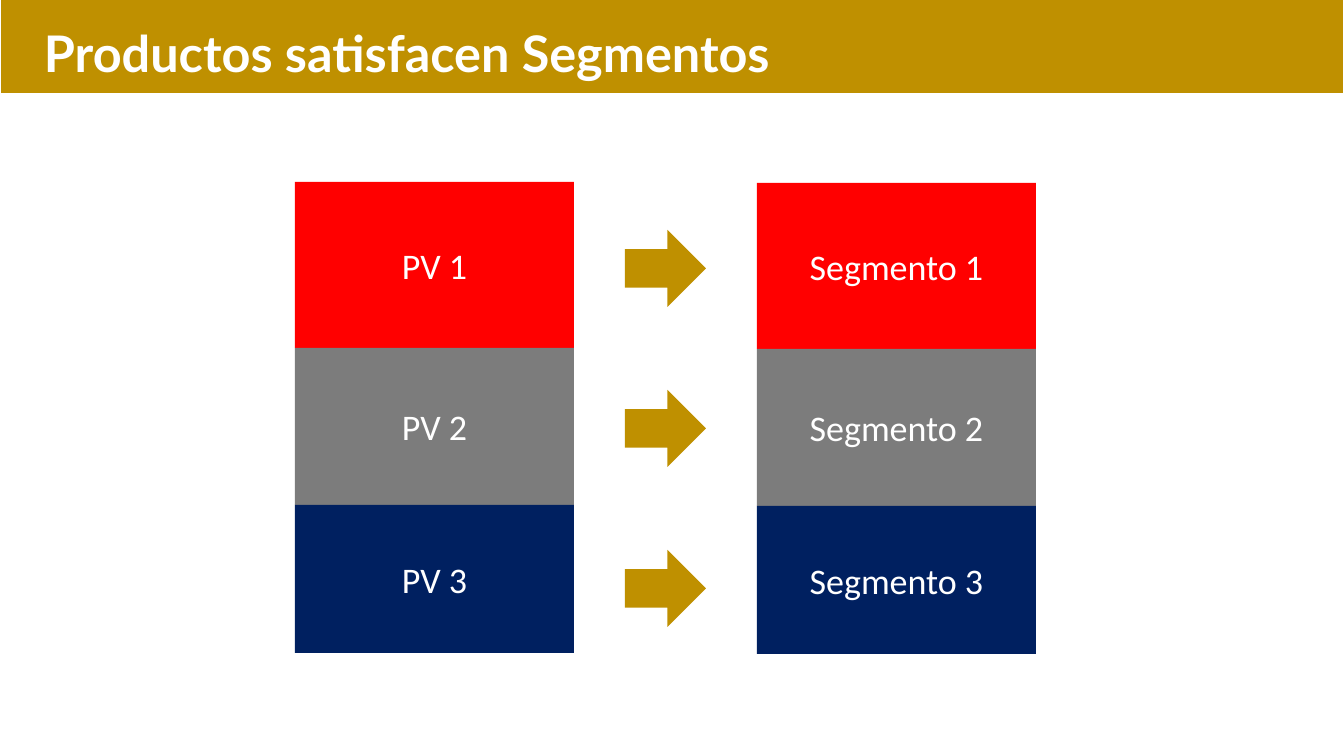
import pptx
import pptx.util
import pptx.dml.color
import pptx.enum.shapes
import pptx.enum.text

PX = 914400 / 100.8
SHAPE = pptx.enum.shapes.MSO_SHAPE
ALIGN = pptx.enum.text.PP_ALIGN
ANCHOR = pptx.enum.text.MSO_ANCHOR

GOLD, WHITE = "BF9000", "FFFFFF"
BAND_COLORS = ["FF0000", "7C7C7C", "002060"]
BAND_HEIGHTS = [166, 157, 148]


def px(n):
    return pptx.util.Emu(round(n * PX))


def rgb(value):
    return pptx.dml.color.RGBColor.from_string(value)


def add_block(slide, kind, x, y, w, h, fill, line=None):
    sp = slide.shapes.add_shape(kind, px(x), px(y), px(w), px(h))
    sp.shadow.inherit = False
    sp.fill.solid()
    sp.fill.fore_color.rgb = rgb(fill)
    if line:
        sp.line.color.rgb = rgb(line)
        sp.line.width = pptx.util.Pt(1)
    else:
        sp.line.fill.background()
    return sp


def set_text(sp, text, size, font="Calibri", color=WHITE, bold=False,
             align=ALIGN.CENTER, anchor=ANCHOR.MIDDLE, spacing=None):
    tf = sp.text_frame
    tf.word_wrap = True
    tf.vertical_anchor = anchor
    tf.margin_left = tf.margin_right = px(7)
    tf.margin_top = tf.margin_bottom = px(4)
    p = tf.paragraphs[0]
    p.alignment = align
    p.line_spacing = spacing
    r = p.add_run()
    r.text = text
    r.font.name = font
    r.font.size = pptx.util.Pt(size)
    r.font.bold = bold
    r.font.color.rgb = rgb(color)


def add_banner(slide, title, x, y, w, h):
    add_block(slide, SHAPE.RECTANGLE, x, y, w, h, GOLD, line=WHITE)
    tb = slide.shapes.add_textbox(px(x + 37), px(y - 7), px(w), px(h))
    set_text(tb, title, 36, font="Lato", bold=True, align=ALIGN.LEFT,
             anchor=ANCHOR.BOTTOM, spacing=0.9)


def add_stack(slide, label, x, y, w):
    """Bands of one column, each directly below the last."""
    for i, (fill, h) in enumerate(zip(BAND_COLORS, BAND_HEIGHTS), 1):
        sp = add_block(slide, SHAPE.RECTANGLE, x, y, w, h, fill)
        set_text(sp, f"{label} {i}", 25.7)
        y += h


def add_arrows(slide, x, y, w, h, pitch):
    for i in range(len(BAND_COLORS)):
        add_block(slide, SHAPE.RIGHT_ARROW, x, y + i * pitch, w, h, GOLD)


def main():
    prs = pptx.Presentation()
    prs.slide_width, prs.slide_height = px(1344), px(756)
    slide = prs.slides.add_slide(prs.slide_layouts[6])

    # Segments, products and the arrows between them
    add_stack(slide, "Segmento", 757, 183, 279)
    add_stack(slide, "PV", 295, 182, 279)
    add_arrows(slide, 625, 230, 81, 77, pitch=160)

    # Title band
    add_banner(slide, "Productos satisfacen Segmentos", 0, -11, 1344, 105)

    prs.save("out.pptx")


if __name__ == "__main__":
    main()
